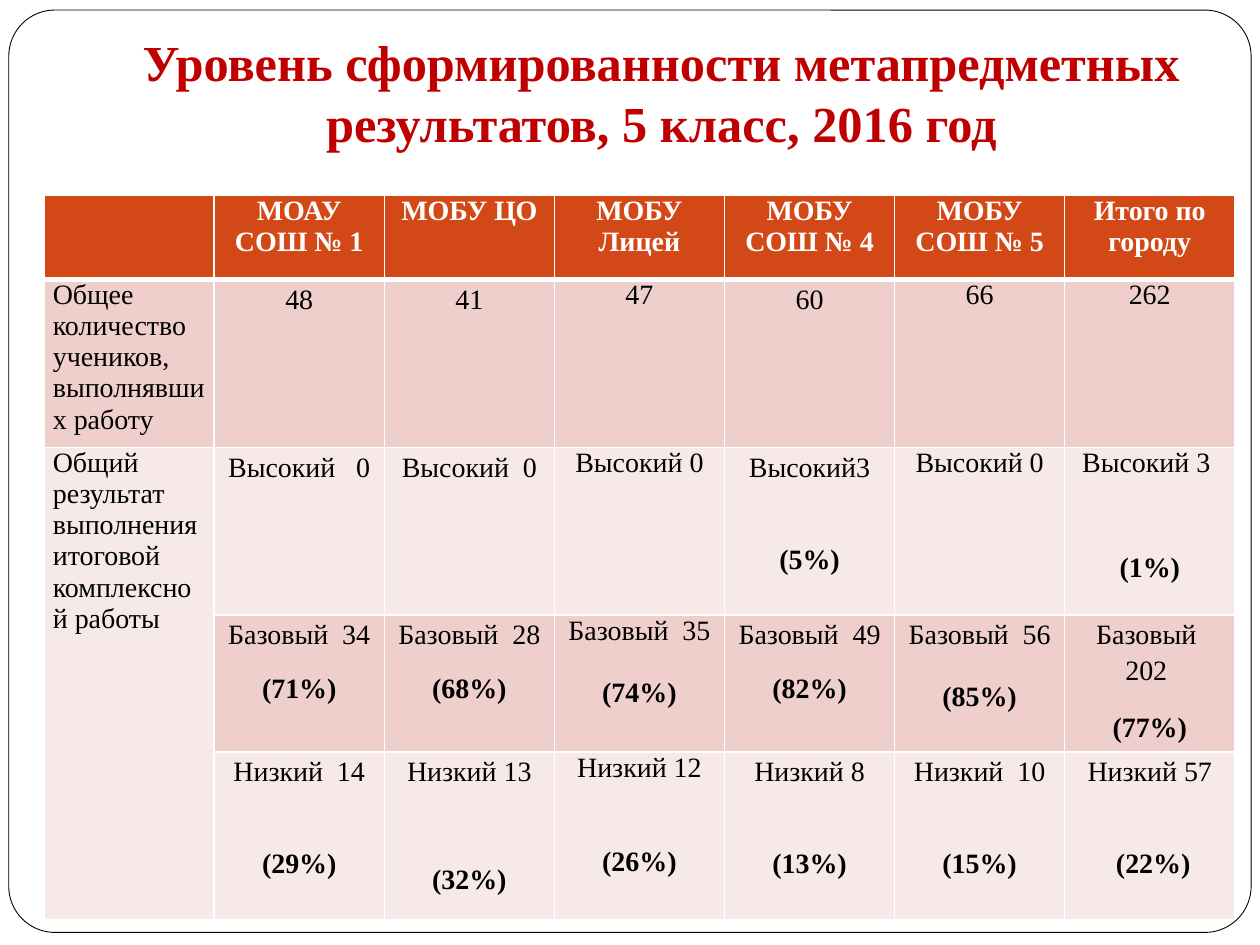
from lxml import etree
from pptx import Presentation
from pptx import util as u
from pptx.dml.color import RGBColor
from pptx.enum import shapes, text
from pptx.oxml.ns import qn

WHITE = RGBColor(0xFF, 0xFF, 0xFF)
BLACK = RGBColor(0x00, 0x00, 0x00)
TITLE_RED = RGBColor(0xC0, 0x00, 0x00)
HEADER_ORANGE = RGBColor(0xD3, 0x48, 0x17)
BAND_DARK = RGBColor(0xEF, 0xCF, 0xCC)
BAND_LIGHT = RGBColor(0xF7, 0xE9, 0xE8)
CENTER, LEFT = text.PP_ALIGN.CENTER, text.PP_ALIGN.LEFT


def write(paragraph, words, size, color, bold, align, spacing=1.0, before=0):
    run = paragraph.add_run()
    run.text = words
    run.font.color.rgb = color
    for name, value in {"name": "Times New Roman", "size": u.Pt(size), "bold": bold}.items():
        setattr(run.font, name, value)
    layout = {"alignment": align, "line_spacing": spacing, "space_before": u.Pt(before)}
    for name, value in layout.items():
        setattr(paragraph, name, value)


def style_cell(cell, fill, bottom):
    for side in ("left", "right", "top", "bottom"):
        setattr(cell, f"margin_{side}", u.Inches(0.07 if side in ("left", "right") else 0))
    # Borders come before the fill in the cell properties
    properties = cell._tc.get_or_add_tcPr()
    for tag, width in {"a:lnL": 1, "a:lnR": 1, "a:lnT": 1, "a:lnB": bottom}.items():
        border = etree.SubElement(properties, qn(tag), w=str(u.Pt(width)))
        solid = etree.SubElement(border, qn("a:solidFill"))
        etree.SubElement(solid, qn("a:srgbClr"), val=str(WHITE))
    cell.fill.solid()
    cell.fill.fore_color.rgb = fill


deck = Presentation()
deck.slide_width, deck.slide_height = u.Inches(10), u.Inches(7.5)
slide = deck.slides.add_slide(deck.slide_layouts[6])

# Rounded frame
frame = slide.shapes.add_shape(
    shapes.MSO_SHAPE.ROUNDED_RECTANGLE,
    u.Inches(0.07), u.Inches(0.08), u.Inches(9.86), u.Inches(7.32))
frame.adjustments[0] = 0.05
frame.shadow.inherit = False
frame.fill.solid()
frame.fill.fore_color.rgb = WHITE
frame.line.color.rgb = BLACK
frame.line.width = u.Pt(0.5)

# Title
title = slide.shapes.add_textbox(
    u.Inches(1), u.Inches(0.3), u.Inches(8.5), u.Inches(1.01)).text_frame
title_format = {"word_wrap": True, "vertical_anchor": text.MSO_ANCHOR.BOTTOM,
                "margin_bottom": u.Inches(0.1)}
for name, value in title_format.items():
    setattr(title, name, value)
write(title.paragraphs[0],
      "Уровень сформированности метапредметных результатов, 5 класс, 2016 год",
      28.8, TITLE_RED, True, CENTER)

# Table content: each result is level, share, gap between them in points
schools = ["", "МОАУ СОШ № 1", "МОБУ ЦО", "МОБУ Лицей",
           "МОБУ СОШ № 4", "МОБУ СОШ № 5", "Итого по городу"]
pupils = ["Общее количество учеников, выполнявших работу",
          "48", "41", "47", "60", "66", "262"]
high = ["Общий результат выполнения итоговой комплексной работы",
        "Высокий   0", "Высокий  0", "Высокий 0", ("Высокий3", "(5%)", 32),
        "Высокий 0", ("Высокий 3 ", "(1%)", 42)]
basic = ["", ("Базовый  34", "(71%)", 10), ("Базовый  28", "(68%)", 10),
         ("Базовый  35", "(74%)", 18), ("Базовый  49", "(82%)", 10),
         ("Базовый  56", "(85%)", 15), ("Базовый  202 ", "(77%)", 12)]
low = ["", ("Низкий  14", "(29%)", 32), ("Низкий 13", "(32%)", 41),
       ("Низкий 12", "(26%)", 36), ("Низкий 8", "(13%)", 32),
       ("Низкий  10", "(15%)", 32), ("Низкий 57", " (22%)", 32)]

# Row: cells, height, fill, columns set with looser lines
rows = [
    (schools, 0.67, HEADER_ORANGE, ()),
    (pupils, 1.3, BAND_DARK, (1, 2, 4)),
    (high, 1.33, BAND_LIGHT, (1, 2, 4)),
    (basic, 0.98, BAND_DARK, (1, 2, 4, 5, 6)),
    (low, 1.33, BAND_LIGHT, (1, 2, 4, 5, 6)),
]

results = slide.shapes.add_table(
    len(rows), len(schools), u.Inches(0.35), u.Inches(1.55),
    u.Inches(9.45), u.Inches(5.61)).table
results.horz_banding = False
for column in results.columns:
    column.width = u.Inches(1.35)
results.cell(2, 0).merge(results.cell(4, 0))

for r, (entries, height, fill, loose) in enumerate(rows):
    results.rows[r].height = u.Inches(height)
    header = r == 0
    for c, entry in enumerate(entries):
        cell = results.cell(r, c)
        style_cell(cell, BAND_LIGHT if c == 0 and r > 2 else fill, 3 if header else 1)
        if not entry:
            continue
        level, share, gap = entry if isinstance(entry, tuple) else (entry, None, 0)
        spacing = 1.15 if c in loose else 1.0
        write(cell.text_frame.paragraphs[0], level, 16, WHITE if header else BLACK,
              header, CENTER if c else LEFT, spacing)
        if share:
            write(cell.text_frame.add_paragraph(), share, 16, BLACK, True,
                  CENTER, spacing, gap)

deck.save("out.pptx")
